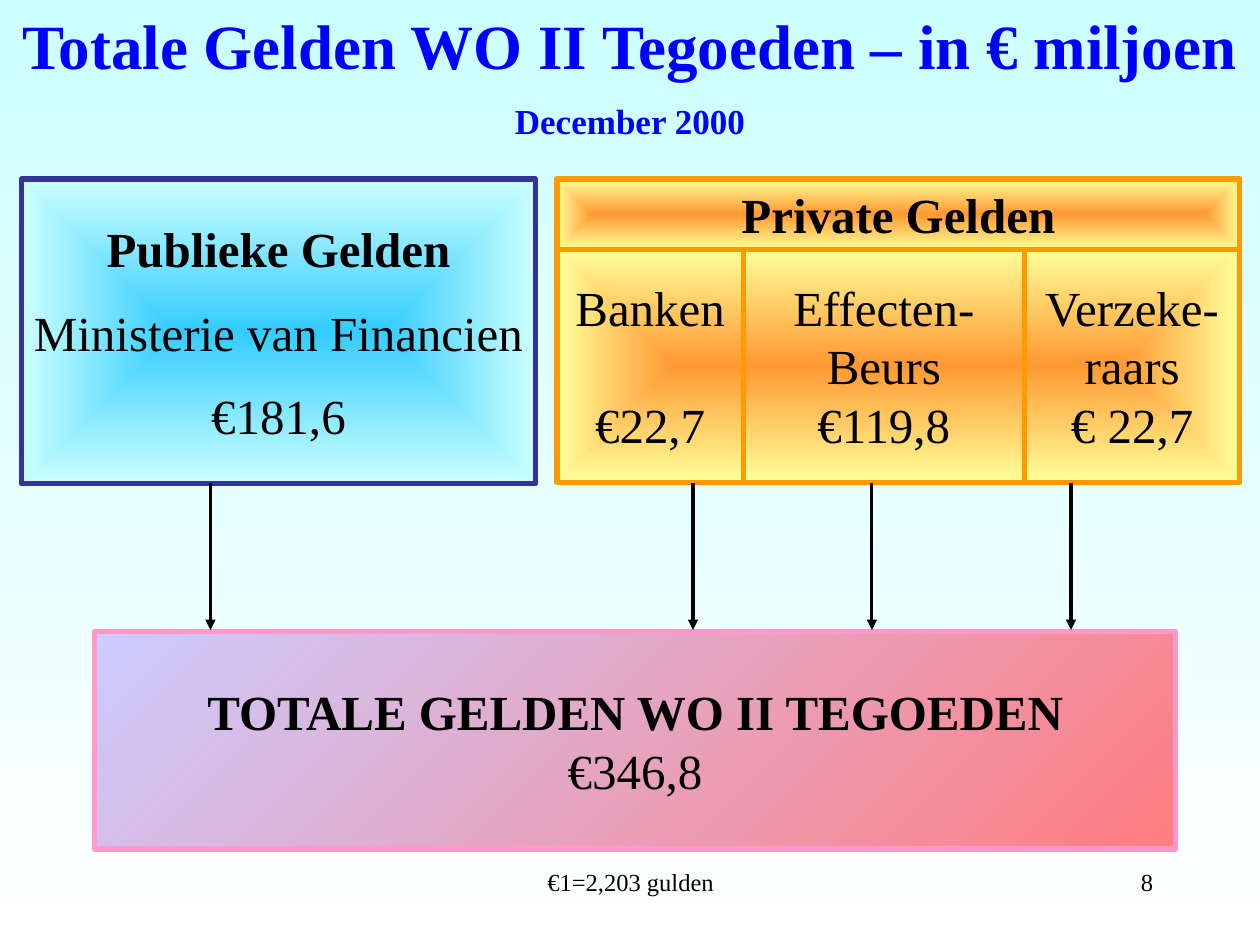
from dataclasses import dataclass
from typing import NamedTuple, Optional

from lxml.etree import SubElement
from pptx import Presentation
from pptx.dml.color import RGBColor
from pptx.dml.fill import FillFormat
from pptx.enum.shapes import MSO_CONNECTOR, MSO_SHAPE
from pptx.enum.text import MSO_ANCHOR, PP_ALIGN
from pptx.oxml.ns import qn
from pptx.shapes.autoshape import Shape
from pptx.slide import Slide
from pptx.text.text import TextFrame
from pptx.util import Inches, Pt


@dataclass(frozen=True)
class Theme:
    font: str = "Times New Roman"
    ink: str = "000000"
    heading: str = "0000FF"
    sky: tuple = ("CCFFFF", "FFFFFF")
    public: tuple = ("33CCFF", "CCFFFF")
    public_border: str = "333399"
    private: tuple = ("FF9933", "FFFF99")
    private_border: str = "FF9900"
    total: tuple = ("CCCCFF", "FF7C80")
    total_border: str = "FF99CC"
    title_size: float = 36
    date_size: float = 20
    body_size: float = 28
    footer_size: float = 14
    border_width: float = 3
    arrow_width: float = 1.75


THEME = Theme()


class Area(NamedTuple):
    left: float
    top: float
    width: float
    height: float

    def inches(self) -> tuple:
        return tuple(Inches(length) for length in self)


class Line(NamedTuple):
    text: str
    size: float = THEME.body_size
    bold: bool = False
    before: float = 0


class Panel(NamedTuple):
    area: Area
    colours: tuple
    border: str
    lines: tuple = ()
    angle: Optional[float] = None


class Column(NamedTuple):
    left: float
    right: float
    arrow: float
    lines: tuple


PRIVATE = Area(4.42, 1.97, 5.42, 1.86)
PRIVATE_RIGHT = PRIVATE.left + PRIVATE.width
PRIVATE_BOTTOM = PRIVATE.top + PRIVATE.height
LINE_PITCH = 33.7
ARROW_BOTTOM = 5
PUBLIC_ARROW = 1.67

PUBLIC_PANEL = Panel(
    Area(0.17, 1.42, 4.08, 2.42), THEME.public, THEME.public_border,
    (Line("Publieke Gelden", bold=True, before=14),
     Line("Ministerie van Financien", before=14),
     Line("€181,6", before=14)))
PRIVATE_PANEL = Panel(PRIVATE, THEME.private, THEME.private_border)
PRIVATE_HEADER = Panel(
    Area(PRIVATE.left, 1.42, PRIVATE.width, 0.56), THEME.private,
    THEME.private_border, (Line("Private Gelden", bold=True),))
TOTAL_PANEL = Panel(
    Area(0.75, 5.01, 8.58, 1.73), THEME.total, THEME.total_border,
    (Line("TOTALE GELDEN WO II TEGOEDEN", bold=True), Line("€346,8")), angle=45)

COLUMNS = (
    Column(PRIVATE.left, 5.9, 5.5,
           (Line("Banken"), Line("€22,7", before=LINE_PITCH))),
    Column(5.9, 8.13, 6.92,
           (Line("Effecten-"), Line("Beurs"), Line("€119,8"))),
    Column(8.13, PRIVATE_RIGHT, 8.5,
           (Line("Verzeke-"), Line("raars"), Line("€ 22,7"))),
)


def write(frame: TextFrame, lines: tuple, *, colour: str = THEME.ink,
          align: PP_ALIGN = PP_ALIGN.CENTER,
          anchor: MSO_ANCHOR = MSO_ANCHOR.MIDDLE, wrap: bool = False) -> None:
    frame.word_wrap = wrap
    frame.vertical_anchor = anchor
    for index, line in enumerate(lines):
        paragraph = frame.add_paragraph() if index else frame.paragraphs[0]
        paragraph.alignment = align
        paragraph.space_before = Pt(line.before)
        run = paragraph.add_run()
        run.text = line.text
        run.font.name = THEME.font
        run.font.size = Pt(line.size)
        run.font.bold = line.bold
        run.font.color.rgb = RGBColor.from_string(colour)


def add_text(slide: Slide, area: Area, lines: tuple, **style) -> None:
    write(slide.shapes.add_textbox(*area.inches()).text_frame, lines, **style)


def blend(fill: FillFormat, colours: tuple, angle: float = 0) -> None:
    fill.gradient()
    fill.gradient_angle = (360 - angle) % 360
    for stop, colour, position in zip(fill.gradient_stops, colours, (0, 1)):
        stop.color.rgb = RGBColor.from_string(colour)
        stop.position = position


def blend_from_centre(panel: Shape) -> None:
    gradient = panel._element.spPr.find(qn("a:gradFill"))
    gradient.remove(gradient.find(qn("a:lin")))
    path = SubElement(gradient, qn("a:path"), {"path": "shape"})
    SubElement(path, qn("a:fillToRect"), dict.fromkeys("ltrb", "50000"))


def add_panel(slide: Slide, panel: Panel) -> None:
    box = slide.shapes.add_shape(MSO_SHAPE.RECTANGLE, *panel.area.inches())
    box.shadow.inherit = False
    blend(box.fill, panel.colours, panel.angle or 0)
    if panel.angle is None:
        blend_from_centre(box)
    box.line.color.rgb = RGBColor.from_string(panel.border)
    box.line.width = Pt(THEME.border_width)
    write(box.text_frame, panel.lines)


def add_vertical(slide: Slide, x: float, top: float, bottom: float,
                 colour: str, width: float, arrow: bool = False) -> None:
    stroke = slide.shapes.add_connector(
        MSO_CONNECTOR.STRAIGHT, Inches(x), Inches(top), Inches(x), Inches(bottom))
    stroke.line.color.rgb = RGBColor.from_string(colour)
    stroke.line.width = Pt(width)
    if arrow:
        SubElement(stroke.line._get_or_add_ln(), qn("a:tailEnd"), {"type": "triangle"})
    SubElement(stroke._element.spPr, qn("a:effectLst"))


def main() -> None:
    deck = Presentation()
    deck.slide_width, deck.slide_height = Inches(10), Inches(7.5)
    slide = deck.slides.add_slide(deck.slide_layouts[6])
    blend(slide.background.fill, THEME.sky, 90)

    add_text(slide, Area(3.42, 6.83, 3.17, 0.5),
             (Line("€1=2,203 gulden", THEME.footer_size),),
             anchor=MSO_ANCHOR.TOP, wrap=True)
    add_text(slide, Area(7.17, 6.83, 2.08, 0.5), (Line("8", THEME.footer_size),),
             align=PP_ALIGN.RIGHT, anchor=MSO_ANCHOR.TOP, wrap=True)
    add_text(slide, Area(0, 0, 10, 1.2),
             (Line("Totale Gelden WO II Tegoeden – in € miljoen",
                   THEME.title_size, True),
              Line("December 2000", THEME.date_size, True, before=10)),
             colour=THEME.heading, anchor=MSO_ANCHOR.TOP, wrap=True)

    add_panel(slide, PUBLIC_PANEL)
    add_panel(slide, PRIVATE_PANEL)
    for column in COLUMNS:
        add_text(slide, Area(column.left, PRIVATE.top,
                             column.right - column.left, PRIVATE.height), column.lines)
    for column in COLUMNS[1:]:
        add_vertical(slide, column.left, PRIVATE.top, PRIVATE_BOTTOM,
                     THEME.private_border, THEME.border_width)
    add_panel(slide, PRIVATE_HEADER)
    add_panel(slide, TOTAL_PANEL)
    for x in (PUBLIC_ARROW, *(column.arrow for column in COLUMNS)):
        add_vertical(slide, x, PRIVATE_BOTTOM, ARROW_BOTTOM,
                     THEME.ink, THEME.arrow_width, arrow=True)

    deck.save("out.pptx")


if __name__ == "__main__":
    main()
